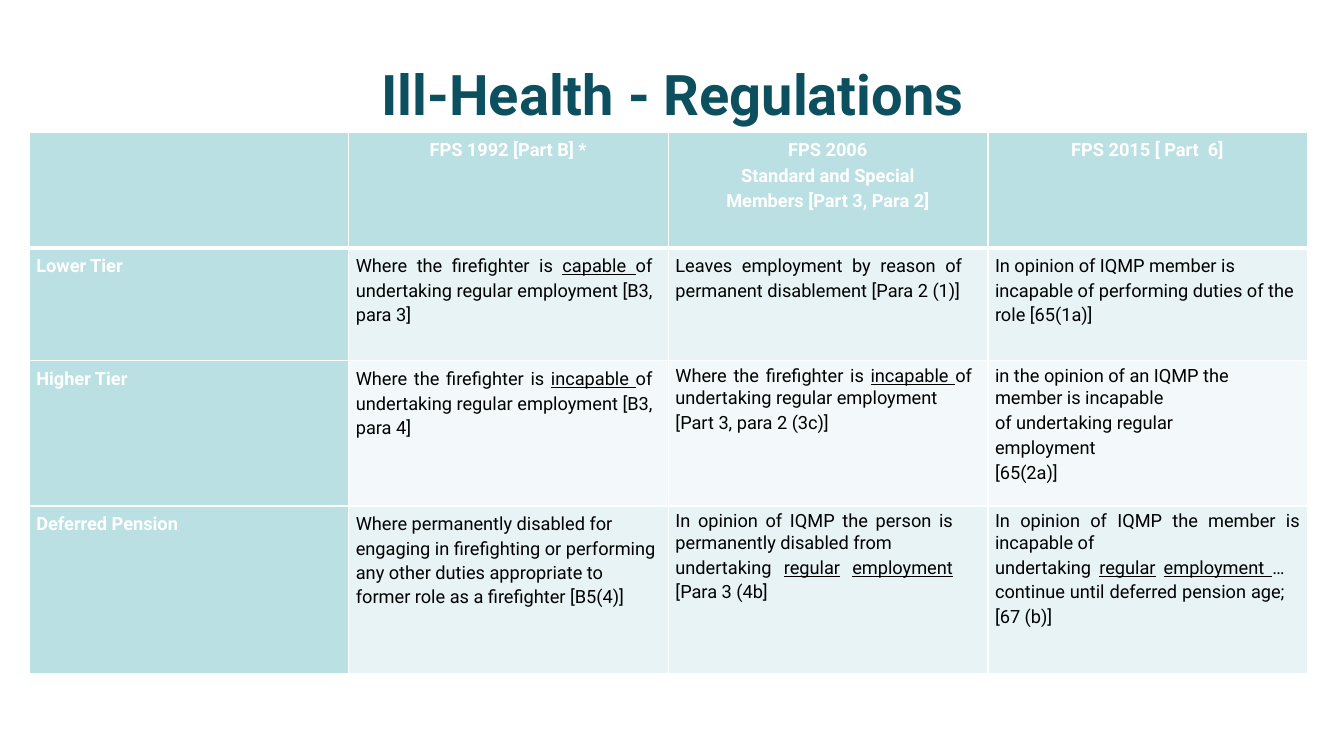
from collections import namedtuple

from lxml.etree import SubElement
from pptx import Presentation
from pptx.dml.color import RGBColor
from pptx.enum.text import MSO_ANCHOR, PP_ALIGN as Align
from pptx.oxml.ns import qn
from pptx.util import Inches, Pt

FONT = "Roboto"
TITLE_COLOR, WHITE, BLACK = "0C5060", "FFFFFF", "000000"
HEADING_FILL = "BBE0E3"
BAND_FILLS = ["E7F3F4", "F3F9FA"]
ROW_HEIGHTS = [1.15, 1.12, 1.44, 1.66]
COLUMN_WIDTH = 3.17

# Underlined words stand between underscores; right is an indent in inches
Para = namedtuple("Para", "text align line right", defaults=(Align.LEFT, 1.15, 0))


def justified(text, right=0, line=1.15):
    return Para(text, Align.JUSTIFY, line, right)


def heading(text):
    return Para(text, Align.CENTER)


ROWS = [
    [
        [],
        [heading("FPS 1992 [Part B] *")],
        [heading("FPS 2006"), heading("Standard and Special"),
         heading("Members [Part 3, Para 2]")],
        [heading("FPS 2015 [ Part  6]")],
    ],
    [
        [Para("Lower Tier")],
        [justified("Where the firefighter is _capable _of undertaking regular "
                   "employment [B3, para 3]", 0.08)],
        [justified("Leaves employment by reason of permanent disablement "
                   "[Para 2 (1)]", 0.18)],
        [Para("In opinion of IQMP member is incapable of performing duties "
              "of the role [65(1a)]")],
    ],
    [
        [Para("Higher Tier")],
        [justified("Where the firefighter is _incapable _of undertaking regular "
                   "employment [B3, para 4]", 0.08)],
        [justified("Where the firefighter is _incapable _of undertaking regular "
                   "employment", 0.08, 1.01),
         Para("[Part 3, para 2 (3c)]")],
        [Para("in the opinion of an IQMP the member is incapable",
              line=1.01, right=0.15),
         Para("of undertaking regular"), Para("employment"), Para("[65(2a)]")],
    ],
    [
        [Para("Deferred Pension")],
        [Para("Where permanently disabled for engaging in firefighting or "
              "performing any other duties appropriate to former role as a "
              "firefighter [B5(4)]")],
        [justified("In opinion of IQMP the person is permanently disabled from",
                   0.27, 1.01),
         justified("undertaking _regular_ _employment _[Para 3 (4b]", 0.27)],
        [justified("In opinion of IQMP the member is incapable of", line=1.01),
         justified("undertaking _regular_ _employment _…continue until deferred "
                   "pension age; [67 (b)]", 0.15)],
    ],
]


def color(value):
    return RGBColor.from_string(value)


def style_font(font, size, text_color, bold):
    font.name = FONT
    font.size = Pt(size)
    font.bold = bold
    font.color.rgb = color(text_color)


def add_title(slide, text):
    box = slide.shapes.add_textbox(Inches(0.67), Inches(0.3), Inches(12), Inches(1.25))
    frame = box.text_frame
    frame.word_wrap = True
    frame.vertical_anchor = MSO_ANCHOR.MIDDLE
    frame.text = text
    paragraph = frame.paragraphs[0]
    paragraph.alignment = Align.CENTER
    style_font(paragraph.runs[0].font, 40, TITLE_COLOR, True)


def fill_paragraph(paragraph, content, text_color, bold):
    paragraph.alignment = content.align
    paragraph.line_spacing = content.line
    if content.right:
        paragraph._p.get_or_add_pPr().set("marR", str(Inches(content.right)))
    for index, part in enumerate(content.text.split("_")):
        if part:
            run = paragraph.add_run()
            run.text = part
            style_font(run.font, 13, text_color, bold)
            if index % 2:
                run.font.underline = True


def set_borders(cell, widths):
    """Draw white edges; widths are points for left, right, top and bottom."""
    properties = cell._tc.get_or_add_tcPr()
    for position, (side, width) in enumerate(zip("LRTB", widths)):
        line = SubElement(properties, qn(f"a:ln{side}"), w=str(Pt(width)))
        fill = SubElement(line, qn("a:solidFill"))
        SubElement(fill, qn("a:srgbClr"), val=WHITE)
        properties.insert(position, line)


def fill_cell(cell, contents, fill, text_color, bold):
    cell.fill.solid()
    cell.fill.fore_color.rgb = color(fill)
    cell.margin_left, cell.margin_right = Inches(0.07), Inches(0.08)
    cell.margin_top, cell.margin_bottom = Inches(0.05), Inches(0)
    frame = cell.text_frame
    for index, content in enumerate(contents):
        paragraph = frame.add_paragraph() if index else frame.paragraphs[0]
        fill_paragraph(paragraph, content, text_color, bold)
        if index < len(contents) - 1:
            paragraph.space_after = Pt(0.6)


def add_regulations_table(slide):
    column_count = len(ROWS[0])
    table = slide.shapes.add_table(
        len(ROWS), column_count, Inches(0.29), Inches(1.31),
        Inches(COLUMN_WIDTH * column_count), Inches(sum(ROW_HEIGHTS))).table
    for column in table.columns:
        column.width = Inches(COLUMN_WIDTH)
    for row_index, row in enumerate(ROWS):
        table.rows[row_index].height = Inches(ROW_HEIGHTS[row_index])
        top = 3 if row_index == 1 else 1
        bottom = 3 if row_index == 0 else 1
        for column_index, contents in enumerate(row):
            cell = table.cell(row_index, column_index)
            if row_index == 0 or column_index == 0:
                fill_cell(cell, contents, HEADING_FILL, WHITE, True)
            else:
                fill_cell(cell, contents, BAND_FILLS[(row_index - 1) % 2], BLACK, False)
            set_borders(cell, (1, 1, top, bottom))


def main():
    presentation = Presentation()
    presentation.slide_width, presentation.slide_height = Inches(13.33), Inches(7.5)
    slide = presentation.slides.add_slide(presentation.slide_layouts[6])
    add_title(slide, "Ill-Health - Regulations")
    add_regulations_table(slide)
    presentation.save("out.pptx")


if __name__ == "__main__":
    main()
